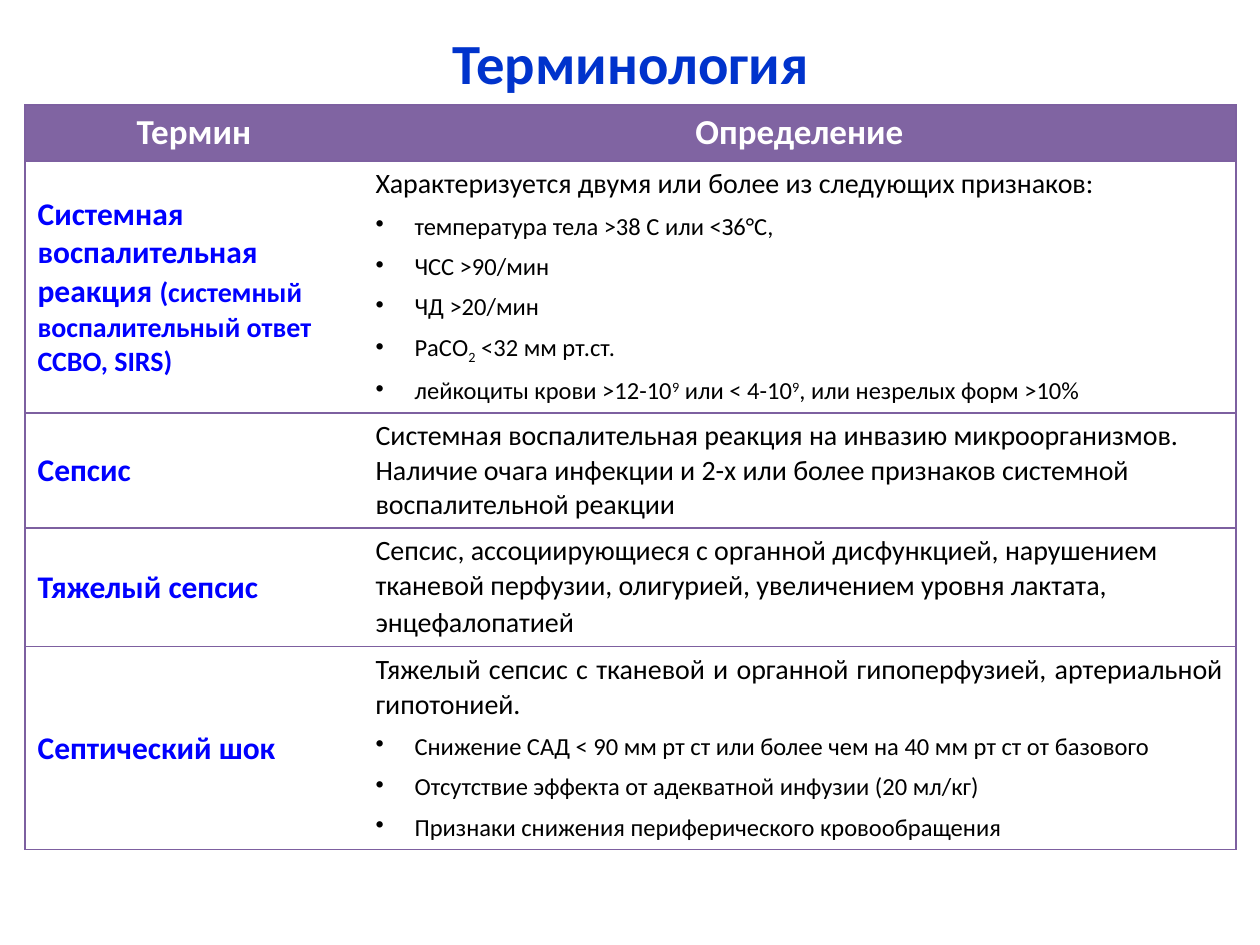
from lxml import etree
from pptx import Presentation
from pptx.dml.color import RGBColor
from pptx.enum.text import MSO_ANCHOR, PP_ALIGN
from pptx.oxml.ns import qn
from pptx.util import Pt

PX = 914400 / 126
FONT = "Calibri"
TITLE_BLUE = RGBColor(0x00, 0x33, 0xCC)
TERM_BLUE = RGBColor(0x00, 0x00, 0xFF)
PURPLE = RGBColor(0x80, 0x64, 0xA2)
BORDER = RGBColor(0x7D, 0x60, 0xA0)
WHITE = RGBColor(0xFF, 0xFF, 0xFF)
BLACK = RGBColor(0x00, 0x00, 0x00)
LEFT, CENTER, JUSTIFY = PP_ALIGN.LEFT, PP_ALIGN.CENTER, PP_ALIGN.JUSTIFY
TOP, MIDDLE = MSO_ANCHOR.TOP, MSO_ANCHOR.MIDDLE

SUB, SUP = -25, 30
BULLET_INDENT = 39
COLUMNS = [338, 873]
ROWS = [56, 252, 115, 119, 203]


def px(n):
    return round(n * PX)


def run(text, size=None, baseline=None):
    return text, size, baseline


def para(*runs, size=16, align=LEFT, bullet=False):
    return [run(r) if isinstance(r, str) else r for r in runs], size, align, bullet


def bullets(*items, align=LEFT):
    return [para(*item, size=14, align=align, bullet=True) for item in items]


ENTRIES = [
    ([para("Системная воспалительная реакция ",
           run("(системный воспалительный ответ ССВО, SIRS)", 16), size=18)],
     [para("Характеризуется двумя или более из следующих признаков: ", align=JUSTIFY),
      *bullets(["температура тела >38 С или <З6°С, "],
               ["ЧСС >90/мин "],
               ["ЧД >20/мин "],
               ["РаСО", run("2", baseline=SUB), " <32 мм рт.ст. "],
               ["лейкоциты крови >12-10", run("9", baseline=SUP), " или < 4-10",
                run("9", baseline=SUP), ", или незрелых форм >10%"],
               align=JUSTIFY)]),
    ([para("Сепсис ", size=18, align=JUSTIFY)],
     [para("Системная воспалительная реакция на инвазию микроорганизмов. "
           "Наличие очага инфекции и 2-х или более признаков системной "
           "воспалительной реакции")]),
    ([para("Тяжелый сепсис", size=18)],
     [para("Сепсис, ассоциирующиеся с органной дисфункцией, нарушением "
           "тканевой перфузии, олигурией, увеличением уровня лактата, "
           "энцефалопатией", run(" ", 18))]),
    ([para("Септический шок", size=18, align=JUSTIFY)],
     [para("Тяжелый сепсис с тканевой и органной гипоперфузией, "
           "артериальной гипотонией.", align=JUSTIFY),
      *bullets(["Снижение САД < 90 мм рт ст или более чем на 40 мм рт ст от базового"],
               ["Отсутствие эффекта от адекватной инфузии (20 мл/кг)"],
               ["Признаки снижения периферического кровообращения"])]),
]


class SlideBuilder:
    def __init__(self, slide, font):
        self.slide = slide
        self.font = font

    def style(self, p, size, color, bold, align):
        p.alignment = align
        f = p.font
        f.name, f.size, f.bold = self.font, Pt(size), bold
        f.color.rgb = color

    def title(self, text, x, y, w, h):
        tf = self.slide.shapes.add_textbox(px(x), px(y), px(w), px(h)).text_frame
        tf.word_wrap = True
        tf.vertical_anchor = MIDDLE
        p = tf.paragraphs[0]
        p.text = text
        self.style(p, 32.4, TITLE_BLUE, True, CENTER)

    def table(self, x, y, columns, rows):
        frame = self.slide.shapes.add_table(
            len(rows), len(columns), px(x), px(y), px(sum(columns)), px(sum(rows)))
        table = frame.table
        table.horz_banding = False
        for column, width in zip(table.columns, columns):
            column.width = px(width)
        for row, height in zip(table.rows, rows):
            row.height = px(height)
        return table

    def cell(self, cell, paragraphs, color, bold, anchor, fill=None):
        cell.vertical_anchor = anchor
        if fill is None:
            cell.fill.background()
        else:
            cell.fill.solid()
            cell.fill.fore_color.rgb = fill
        tf = cell.text_frame
        for i, (runs, size, align, bullet) in enumerate(paragraphs):
            p = tf.add_paragraph() if i else tf.paragraphs[0]
            p.space_before = Pt(6)
            self.style(p, size, color, bold, align)
            if bullet:
                self.bullet(p)
            for text, run_size, baseline in runs:
                r = p.add_run()
                r.text = text
                if run_size:
                    r.font.size = Pt(run_size)
                if baseline:
                    r.font._element.set("baseline", str(baseline * 1000))

    def bullet(self, p):
        pPr = p._p.get_or_add_pPr()
        pPr.set("marL", str(px(BULLET_INDENT)))
        pPr.set("indent", str(-px(BULLET_INDENT)))
        mark = etree.Element(qn("a:buChar"), char="•")
        pPr.find(qn("a:defRPr")).addprevious(mark)

    def borders(self, cell, sides):
        """Draw the given sides (letters of LRTB) and clear the others."""
        tcPr = cell._tc.get_or_add_tcPr()
        for i, side in enumerate("LRTB"):
            ln = etree.Element(qn(f"a:ln{side}"), w=str(Pt(0.75)))
            if side in sides:
                fill = etree.SubElement(ln, qn("a:solidFill"))
                etree.SubElement(fill, qn("a:srgbClr"), val=str(BORDER))
            else:
                etree.SubElement(ln, qn("a:noFill"))
            tcPr.insert(i, ln)


def main():
    prs = Presentation()
    prs.slide_width, prs.slide_height = px(1260), px(945)
    s = SlideBuilder(prs.slides.add_slide(prs.slide_layouts[6]), FONT)

    s.title("Терминология", 64, 18, 1134, 87)
    table = s.table(25, 105, COLUMNS, ROWS)
    for i, heading in enumerate(("Термин", "Определение")):
        s.cell(table.cell(0, i), [para(heading, size=20, align=CENTER)],
               WHITE, True, TOP, PURPLE)
    for i, (term, definition) in enumerate(ENTRIES, 1):
        s.cell(table.cell(i, 0), term, TERM_BLUE, True, MIDDLE)
        s.cell(table.cell(i, 1), definition, BLACK, False, TOP)
    for i in range(len(ROWS)):
        s.borders(table.cell(i, 0), "LTB")
        s.borders(table.cell(i, 1), "RTB")

    prs.save("out.pptx")


if __name__ == "__main__":
    main()
